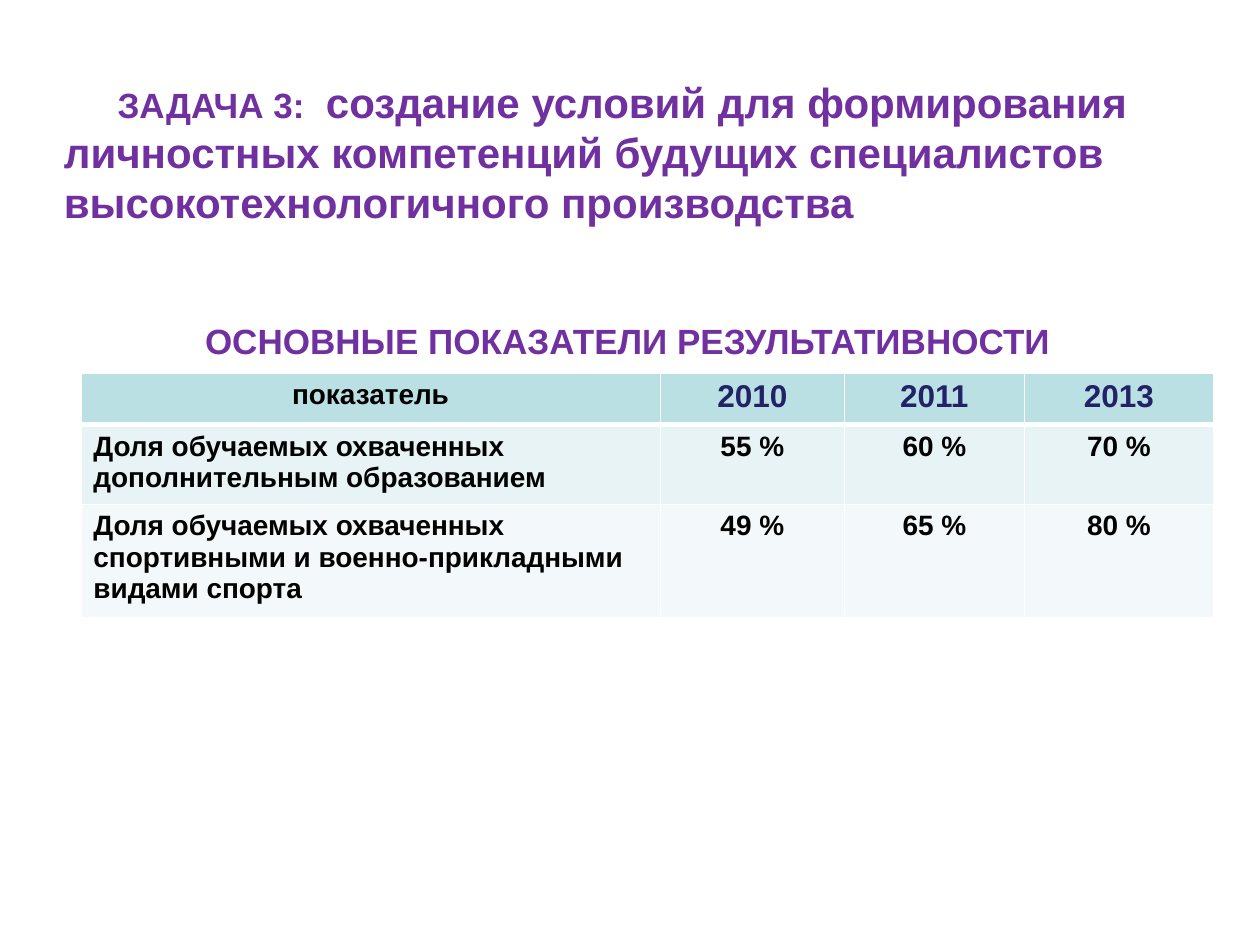
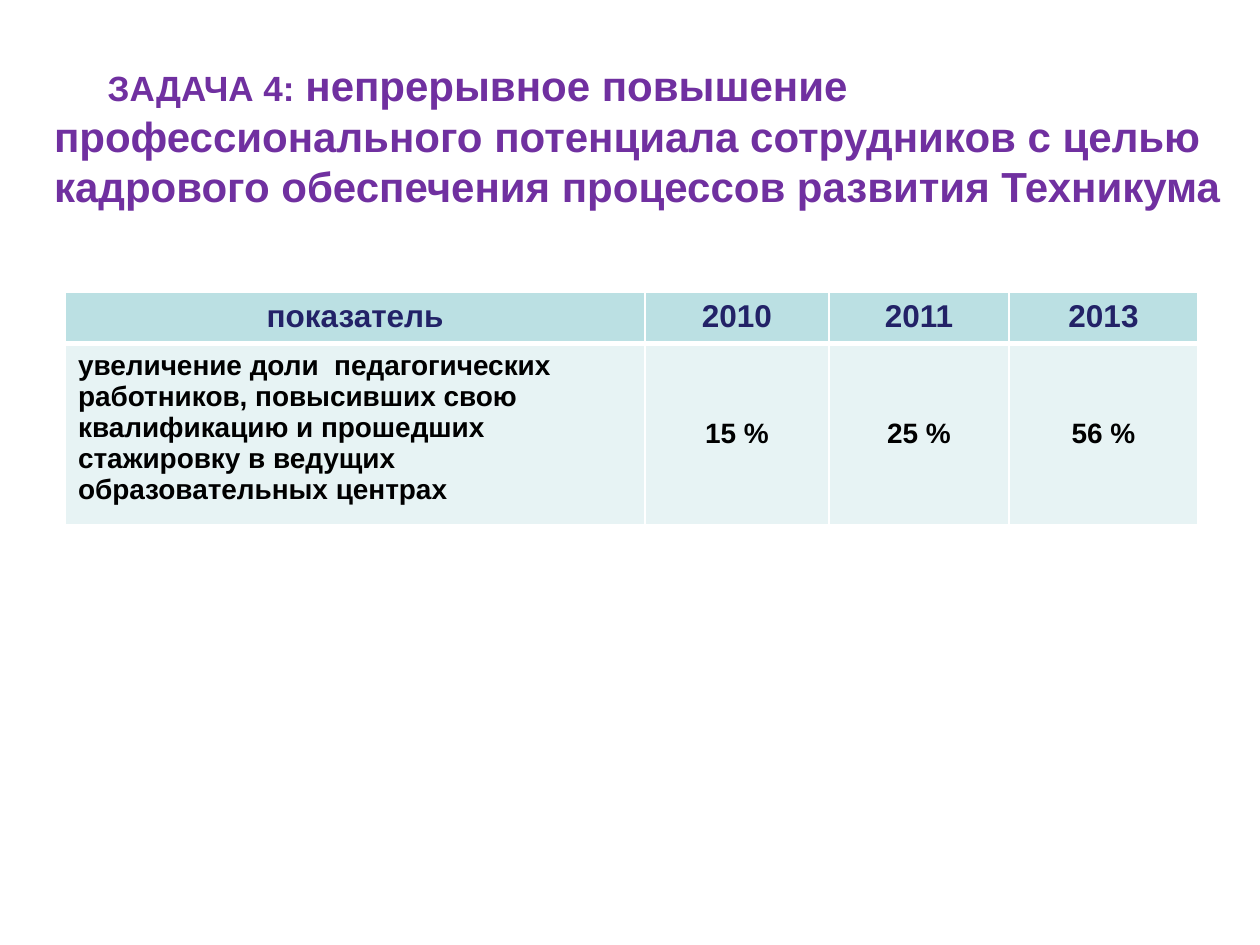
from lxml import etree
from pptx import Presentation
from pptx.dml.color import RGBColor
from pptx.enum.text import MSO_ANCHOR as Anchor, PP_ALIGN as Align
from pptx.oxml.ns import qn
from pptx.util import Cm, Pt

PURPLE = RGBColor(0x70, 0x30, 0xA0)
NAVY = RGBColor(0x22, 0x22, 0x67)
BLACK = RGBColor(0x00, 0x00, 0x00)
WHITE = RGBColor(0xFF, 0xFF, 0xFF)
HEADER_FILL = RGBColor(0xBB, 0xE0, 0xE3)
BAND_FILLS = [RGBColor(0xE7, 0xF3, 0xF4), RGBColor(0xF3, 0xF9, 0xFA)]

SLIDE_WIDTH, SLIDE_HEIGHT = 25.4, 19.05
COLUMN_WIDTHS = [11.68, 3.71, 3.63, 3.81]
HEADER_HEIGHT = 1.04
TITLE_HEIGHT = 5.56
TITLE_LINE = 1.02
YEARS = ["2010", "2011", "2013"]


def add_text(paragraph, text, size=16, color=BLACK, align=Align.LEFT):
    """Append a bold run to the paragraph."""
    paragraph.alignment = align
    run = paragraph.add_run()
    run.text = text
    font = run.font
    font.name, font.size, font.bold = "Arial", Pt(size), True
    font.color.rgb = color


def set_borders(cell, **widths):
    """Draw white cell borders; they must precede the fill in the XML."""
    properties = cell._tc.get_or_add_tcPr()
    for index, (side, width) in enumerate(widths.items()):
        line = etree.Element(qn(f"a:ln{side}"), w=str(Pt(width)))
        fill = etree.SubElement(line, qn("a:solidFill"))
        etree.SubElement(fill, qn("a:srgbClr"), val=str(WHITE))
        properties.insert(index, line)


class Deck:
    """Holds the shared style and the current slide."""

    def __init__(self):
        self.presentation = Presentation()
        self.presentation.slide_width = Cm(SLIDE_WIDTH)
        self.presentation.slide_height = Cm(SLIDE_HEIGHT)
        self.slide = None

    def new_slide(self):
        self.slide = self.presentation.slides.add_slide(self.presentation.slide_layouts[6])

    def text_frame(self, left, top, width, height):
        box = self.slide.shapes.add_textbox(Cm(left), Cm(top), Cm(width), Cm(height))
        frame = box.text_frame
        frame.word_wrap = True
        frame.vertical_anchor = Anchor.MIDDLE
        return frame

    def title(self, left, top, label, gap, text, lines_below):
        """Task title, raised above the middle by a number of lines."""
        frame = self.text_frame(left, top, SLIDE_WIDTH - left, TITLE_HEIGHT)
        frame.margin_bottom = Cm(0.13 + lines_below * TITLE_LINE)
        paragraph = frame.paragraphs[0]
        paragraph._p.get_or_add_pPr().set("indent", str(Cm(1.08)))
        add_text(paragraph, label, size=20, color=PURPLE)
        add_text(paragraph, gap, size=22, color=PURPLE)
        add_text(paragraph, text, size=24, color=PURPLE)

    def subtitle(self, left, top, width, height, text):
        frame = self.text_frame(left, top, width, height)
        add_text(frame.paragraphs[0], text, size=20, color=PURPLE, align=Align.CENTER)

    def indicator_table(self, left, top, rows, row_heights, heading_format, anchor=Anchor.TOP):
        heights = [HEADER_HEIGHT, *row_heights]
        table = self.slide.shapes.add_table(
            len(heights), len(COLUMN_WIDTHS), Cm(left), Cm(top),
            Cm(sum(COLUMN_WIDTHS)), Cm(sum(heights))).table
        for column, width in zip(table.columns, COLUMN_WIDTHS):
            column.width = Cm(width)
        for row, height in zip(table.rows, heights):
            row.height = Cm(height)

        for row_index, values in enumerate([["показатель", *YEARS], *rows]):
            is_header = row_index == 0
            for column_index, value in enumerate(values):
                cell = table.cell(row_index, column_index)
                is_label = column_index == 0
                cell.fill.solid()
                cell.fill.fore_color.rgb = (
                    HEADER_FILL if is_header else BAND_FILLS[(row_index - 1) % 2])
                set_borders(cell, L=1, R=1, T=3 if row_index == 1 else 1,
                            B=3 if is_header else 1)
                if not is_header and not is_label:
                    cell.vertical_anchor = anchor
                text_format = {"size": 18, "color": NAVY} if is_header else {}
                if is_header and is_label:
                    text_format = heading_format
                align = Align.LEFT if is_label and not is_header else Align.CENTER
                add_text(cell.text_frame.paragraphs[0], value, align=align, **text_format)


def main():
    deck = Deck()

    # Task 3: personal competences
    deck.new_slide()
    deck.title(1.04, 0.79, "ЗАДАЧА 3:", "  ",
               "создание условий для формирования личностных компетенций "
               "будущих специалистов высокотехнологичного производства", lines_below=1)
    deck.indicator_table(
        1.63, 7.52,
        [["Доля обучаемых охваченных дополнительным образованием", "55 %", "60 %", "70 %"],
         ["Доля обучаемых охваченных спортивными и военно-прикладными видами спорта",
          "49 %", "65 %", "80 %"]],
        row_heights=[1.49, 2.13], heading_format={"size": 16, "color": BLACK})
    deck.subtitle(1.32, 5.28, 22.86, 3.18, "ОСНОВНЫЕ ПОКАЗАТЕЛИ РЕЗУЛЬТАТИВНОСТИ ")

    # Task 4: staff development
    deck.new_slide()
    deck.title(0.84, 0.97, "ЗАДАЧА 4:", " ",
               "непрерывное повышение профессионального потенциала сотрудников "
               "с целью кадрового обеспечения процессов развития Техникума", lines_below=2)
    deck.indicator_table(
        1.32, 5.89,
        [["увеличение доли  педагогических работников, повысивших свою квалификацию "
          "и прошедших стажировку в ведущих образовательных центрах",
          "15 %", "25 %", "56 %"]],
        row_heights=[3.35], heading_format={"size": 18, "color": NAVY},
        anchor=Anchor.MIDDLE)

    deck.presentation.save("out.pptx")


if __name__ == "__main__":
    main()
